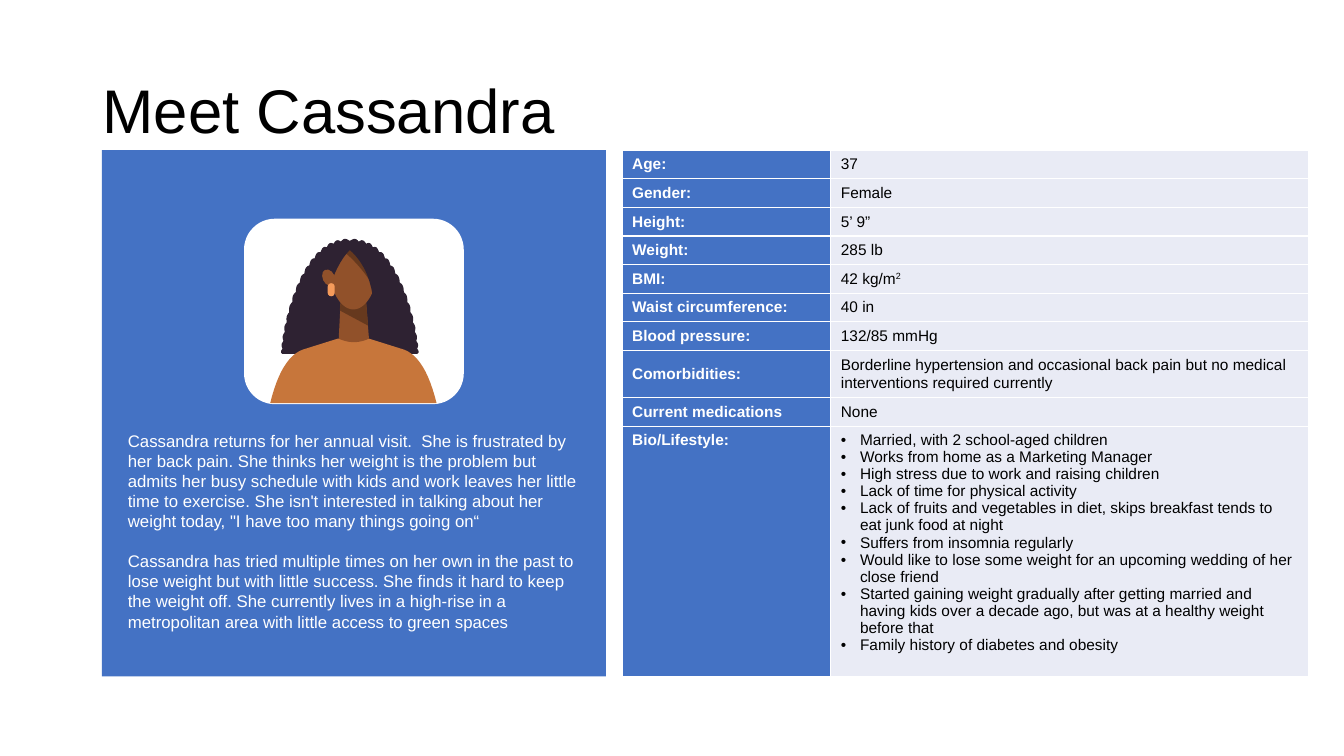
"""Build the patient profile slide "Meet Cassandra"."""
from math import cos, copysign, pi, sin

from pptx import Presentation
from pptx.dml.color import RGBColor
from pptx.enum.shapes import MSO_SHAPE
from pptx.enum.text import MSO_ANCHOR, MSO_AUTO_SIZE
from pptx.oxml import parse_xml
from pptx.oxml.ns import nsdecls
from pptx.util import Inches, Pt

COLORS = {
    "blue": "4472C4", "pale": "E9EBF5", "white": "FFFFFF", "black": "000000",
    "hair": "2E2232", "shirt": "C7763B", "skin": "91512A", "shade": "66391E",
    "earring": "F59B5B",
}
CELL = Inches(0.01)
COLUMNS, ROWS = 1333, 750
PANEL_TOP, PANEL_HEIGHT = 149, 522
BULLET_INDENT = 19 * CELL


def paint(shape, color):
    """Give a shape a plain fill without line or shadow."""
    shape.shadow.inherit = False
    shape.fill.solid()
    shape.fill.fore_color.rgb = RGBColor.from_string(COLORS[color])
    shape.line.fill.background()


def write(para, text, color, size, bold=False):
    """Add a formatted span to a paragraph."""
    span = para.add_run()
    span.text = text
    for name, value in {"name": "Arial", "size": Pt(size), "bold": bold}.items():
        setattr(span.font, name, value)
    span.font.color.rgb = RGBColor.from_string(COLORS[color])
    return span


deck = Presentation()
deck.slide_width, deck.slide_height = COLUMNS * CELL, ROWS * CELL
page = deck.slides.add_slide(deck.slide_layouts[6])

panel = page.shapes.add_shape(
    MSO_SHAPE.RECTANGLE, 101 * CELL, PANEL_TOP * CELL, 500 * CELL, PANEL_HEIGHT * CELL)
paint(panel, "blue")

title = page.shapes.add_textbox(92 * CELL, 40 * CELL, 1150 * CELL, 145 * CELL)
for name, value in {"word_wrap": True, "vertical_anchor": MSO_ANCHOR.MIDDLE}.items():
    setattr(title.text_frame, name, value)
heading = title.text_frame.paragraphs[0]
heading.line_spacing = 0.9
write(heading, "Meet Cassandra", "black", 44)

facts = {
    "Age:": ["37"],
    "Gender:": ["Female"],
    "Height:": ["5’ 9”"],
    "Weight:": ["285 lb"],
    "BMI:": ["42 kg/m"],
    "Waist circumference:": ["40 in"],
    "Blood pressure:": ["132/85 mmHg"],
    "Comorbidities:": ["Borderline hypertension and occasional back pain but no "
                       "medical interventions required currently"],
    "Current medications": ["None"],
    "Bio/Lifestyle:": [
        "Married, with 2 school-aged children",
        "Works from home as a Marketing Manager",
        "High stress due to work and raising children",
        "Lack of time for physical activity",
        "Lack of fruits and vegetables in diet, skips breakfast tends to eat junk "
        "food at night",
        "Suffers from insomnia regularly",
        "Would like to lose some weight for an upcoming wedding of her close friend",
        "Started gaining weight gradually after getting married and having kids over "
        "a decade ago, but was at a healthy weight before that",
        "Family history of diabetes and obesity",
    ],
}
tall_rows = {"Comorbidities:": 43, "Bio/Lifestyle:": 231}
row_heights = [tall_rows.get(label, 26) for label in facts]
column_widths = (207, 474)
frame = page.shapes.add_table(
    len(facts), len(column_widths), 617 * CELL, PANEL_TOP * CELL,
    sum(column_widths) * CELL, sum(row_heights) * CELL)
table = frame.table
for name in ("first_row", "horz_banding"):
    setattr(table, name, False)
for column, width in zip(table.columns, column_widths):
    column.width = width * CELL

for row, (label, lines) in enumerate(facts.items()):
    table.rows[row].height = row_heights[row] * CELL
    anchor = MSO_ANCHOR.TOP if len(lines) > 1 else MSO_ANCHOR.MIDDLE
    styles = (([label], "blue", "white", True), (lines, "pale", "black", False))
    for column, (texts, fill, color, bold) in enumerate(styles):
        cell = table.cell(row, column)
        cell.fill.solid()
        cell.fill.fore_color.rgb = RGBColor.from_string(COLORS[fill])
        cell.vertical_anchor = anchor
        for position, side in enumerate(("lnL", "lnR", "lnT", "lnB")):
            cell._tc.get_or_add_tcPr().insert(position, parse_xml(
                f'<a:{side} {nsdecls("a")} w="{Pt(1)}"><a:solidFill>'
                f'<a:srgbClr val="{COLORS["white"]}"/></a:solidFill></a:{side}>'))
        for index, text in enumerate(texts):
            body = cell.text_frame
            para = body.add_paragraph() if index else body.paragraphs[0]
            write(para, text, color, 11, bold)
            if len(texts) > 1:
                properties = para._p.get_or_add_pPr()
                properties.set("marL", str(BULLET_INDENT))
                properties.set("indent", str(-BULLET_INDENT))
                for tag in ('buFont typeface="Arial"', 'buChar char="•"'):
                    name, setting = tag.split(" ")
                    properties.append(parse_xml(f'<a:{name} {nsdecls("a")} {setting}/>'))
        if texts == facts["BMI:"]:
            square = write(para, "2", color, 11)
            square._r.get_or_add_rPr().set("baseline", "30000")

story = page.shapes.add_textbox(117 * CELL, 422 * CELL, 467 * CELL, 212 * CELL)
for name, value in {"word_wrap": True,
                    "auto_size": MSO_AUTO_SIZE.SHAPE_TO_FIT_TEXT}.items():
    setattr(story.text_frame, name, value)
visit = story.text_frame.paragraphs[0]
visit.space_after = Pt(14)
write(visit, "Cassandra returns for her annual visit.  She is frustrated by her back "
      "pain. She thinks her weight is the problem but admits her busy schedule with "
      "kids and work leaves her little time to exercise. She isn't interested in "
      'talking about her weight today, "I have too many things going on“', "white", 12)
history = story.text_frame.add_paragraph()
write(history, "Cassandra has tried multiple times on her own in the past to lose weight "
      "but with little success. She finds it hard to keep the weight off. She currently "
      "lives in a high-rise in a metropolitan area with little access to green spaces",
      "white", 12)

card = page.shapes.add_shape(
    MSO_SHAPE.ROUNDED_RECTANGLE, 242 * CELL, 217 * CELL, 218 * CELL, 184 * CELL)
paint(card, "white")

HAIR_AXIS, HAIR_BASE, HAIR_HALF_WIDTH, HAIR_HEIGHT = 347, 351, 67, 112
HAIR_WAVES, WAVE_DEPTH = 32, 0.02
FACE_AXIS, FACE_MIDDLE, FACE_HALF_WIDTH, FACE_HALF_HEIGHT = 350.5, 276, 22.5, 31
FACE_TAPER = 0.12
CURVE_STEPS = 12

hair, face = [], []
for step in range(HAIR_WAVES * 6 + 1):
    turn = pi * step / (HAIR_WAVES * 6)
    wave = 1 + WAVE_DEPTH * abs(sin(HAIR_WAVES * turn))
    across = copysign(abs(cos(turn)) ** 0.87, cos(turn))
    up = abs(sin(turn)) ** 1.33
    hair.append((HAIR_AXIS + HAIR_HALF_WIDTH * wave * across,
                 HAIR_BASE - HAIR_HEIGHT * wave * up))
for step in range(CURVE_STEPS * 4):
    turn = 2 * pi * step / (CURVE_STEPS * 4)
    taper = 1 - FACE_TAPER * sin(turn)
    face.append((FACE_AXIS + FACE_HALF_WIDTH * taper * cos(turn),
                 FACE_MIDDLE + FACE_HALF_HEIGHT * sin(turn)))

neck_top, neck_base, shoulder, hem = 298, 336, 347, 400
neck_left, neck_right = (338, neck_top), (363, neck_top)
bends = {
    "sleeve": ((268, hem), [((279, 355), (300, shoulder))]),
    "neck": ((366, neck_base), [((351, 343), (336, neck_base))]),
    "shade": ((339, 248), [((357, 262), (371, 285)), ((381, 275), (366, 248)),
                           ((352, 242), (339, 248))]),
    "fringe": ((310, 285), [((322, 240), (350, 239)), ((376, 244), (389, 296))]),
    "hairline": ((370, 296), [((366, 265), (347, 248)), ((335, 260), (327, 285))]),
}
curves = {}
for name, (start, sections) in bends.items():
    curves[name] = [start]
    for pull, end in sections:
        for step in range(1, CURVE_STEPS + 1):
            share = step / CURVE_STEPS
            curves[name].append(tuple(
                a * (1 - share) ** 2 + 2 * b * share * (1 - share) + c * share ** 2
                for a, b, c in zip(start, pull, end)))
        start = end

left_side = curves["sleeve"] + [(335, neck_base)]
shirt = left_side + [(2 * FACE_AXIS - x, y) for x, y in reversed(left_side)]

portrait = page.shapes.add_group_shape()
for points, color in (
        (hair, "hair"),
        (shirt, "shirt"),
        (curves["neck"] + [neck_left, neck_right], "skin"),
        ([neck_left, neck_right, (365, 323), (337, 308)], "shade"),
        (face, "skin"),
        (curves["shade"], "shade"),
        (curves["fringe"] + curves["hairline"], "hair")):
    corners = [(x * CELL, y * CELL) for x, y in points]
    outline = portrait.shapes.build_freeform(*corners[0])
    outline.add_line_segments(corners[1:], close=True)
    paint(outline.convert_to_shape(), color)

ear = portrait.shapes.add_shape(
    MSO_SHAPE.OVAL, 320 * CELL, 267 * CELL, 12 * CELL, 17 * CELL)
ear.rotation = -25
earring = portrait.shapes.add_shape(
    MSO_SHAPE.ROUNDED_RECTANGLE, 325 * CELL, 281 * CELL, 7 * CELL, 13 * CELL)
earring.adjustments[0] = 0.5
for shape, color in ((ear, "skin"), (earring, "earring")):
    paint(shape, color)

deck.save("out.pptx")
